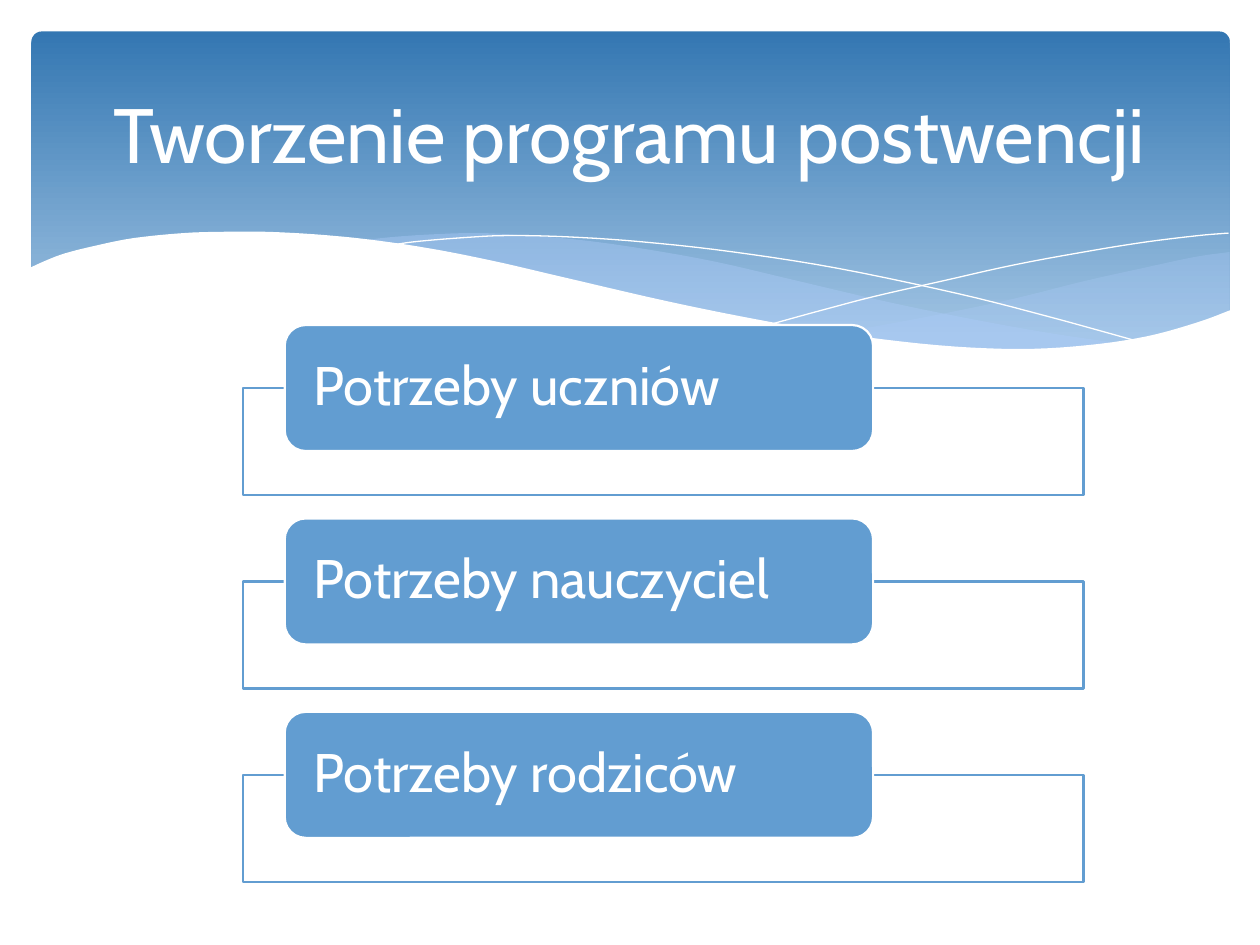
from dataclasses import dataclass
from typing import Optional

from lxml.etree import SubElement
from pptx import Presentation
from pptx.dml.color import RGBColor
from pptx.enum.shapes import MSO_SHAPE as Shape
from pptx.enum.text import MSO_ANCHOR as Anchor, PP_ALIGN as Align
from pptx.oxml.ns import qn
from pptx.util import Inches, Pt

WHITE = RGBColor(0xFF, 0xFF, 0xFF)
SKY = RGBColor(0xAC, 0xCB, 0xF9)
BLUE = RGBColor(0x62, 0x9D, 0xD1)
BANNER_TOP = RGBColor(0x34, 0x77, 0xB2)
BANNER_BOTTOM = RGBColor(0xA1, 0xC4, 0xE3)
FONT = "Cabin"

Point = tuple[float, float]


@dataclass(frozen=True)
class Wave:
    curves: list[list[Point]]
    fill: Optional[RGBColor] = None
    opacity: int = 100


@dataclass(frozen=True)
class Need:
    label: str
    top: float


WAVES = [
    Wave([[(9.76, 2), (9.48, 2.04), (9.06, 2.13), (8.61, 2.23), (8.05, 2.37),
           (7.53, 2.48), (7.06, 2.57), (6.61, 2.65)],
          [(6.61, 2.65), (7.05, 2.71), (7.57, 2.76), (8.03, 2.78), (8.54, 2.76),
           (8.97, 2.7), (9.35, 2.62), (9.76, 2.47)]], SKY, 29),
    Wave([[(8.93, 2.73), (8.37, 2.65), (7.75, 2.54), (7.06, 2.4), (6.29, 2.22),
           (5.69, 2.08), (5.14, 1.98), (4.65, 1.91), (4.2, 1.87), (3.8, 1.85),
           (3.44, 1.86), (3.13, 1.88), (2.86, 1.91)],
          [(2.86, 1.91), (3.42, 1.99), (4.04, 2.11), (4.49, 2.22), (5.3, 2.4),
           (6.01, 2.55), (6.65, 2.66), (7.22, 2.74), (7.73, 2.77), (8.18, 2.78),
           (8.57, 2.77), (8.93, 2.73)]], SKY, 40),
    Wave([[(3.09, 1.95), (3.28, 1.92), (3.63, 1.89), (4.01, 1.87), (4.5, 1.88),
           (5.1, 1.92), (5.82, 2), (6.65, 2.13), (7.6, 2.33), (8.31, 2.51),
           (9.07, 2.72)]]),
    Wave([[(6.13, 2.57), (6.53, 2.46), (6.95, 2.35), (7.48, 2.23), (8.06, 2.1),
           (8.66, 1.99), (9.1, 1.92), (9.51, 1.87), (9.75, 1.85)]]),
    Wave([[(9.77, 2.46), (9.5, 2.56), (9.1, 2.67), (8.63, 2.74), (8.09, 2.77),
           (7.44, 2.74), (6.68, 2.65), (6.03, 2.54), (5.29, 2.39), (4.47, 2.2),
           (3.91, 2.07), (3.4, 1.97), (2.92, 1.9), (2.5, 1.86), (2.11, 1.84),
           (1.77, 1.84), (1.46, 1.85), (1.06, 1.89), (0.76, 1.95), (0.52, 2.01),
           (0.36, 2.07), (0.23, 2.13)],
          [(0.23, 3.29), (9.77, 3.29)]], WHITE),
]

FIRST_TOP, LAST_TOP = 2.58, 5.65
LABELS = ["Potrzeby uczniów", "Potrzeby nauczyciel", "Potrzeby rodziców"]
PITCH = (LAST_TOP - FIRST_TOP) / (len(LABELS) - 1)
NEEDS = [Need(label, FIRST_TOP + row * PITCH) for row, label in enumerate(LABELS)]


def smooth(knots: list[Point], steps: int = 5) -> list[Point]:
    if len(knots) < 3:
        return knots
    padded = [knots[0], *knots, knots[-1]]
    points = []
    for before, start, end, after in zip(padded, padded[1:], padded[2:], padded[3:]):
        for step in range(steps):
            t = step / steps
            points.append(tuple(
                b + (c - a) * t / 2
                + (2 * a - 5 * b + 4 * c - d) * t**2 / 2
                + (3 * b - a - 3 * c + d) * t**3 / 2
                for a, b, c, d in zip(before, start, end, after)))
    return points + [knots[-1]]


def set_fill(shape, color: RGBColor, opacity: int = 100) -> None:
    shape.fill.solid()
    shape.fill.fore_color.rgb = color
    if opacity < 100:
        srgb = shape.fill._xPr.find(qn("a:solidFill"))[0]
        SubElement(srgb, qn("a:alpha")).set("val", str(opacity * 1000))


def set_line(shape, color: RGBColor, width: float) -> None:
    shape.line.color.rgb = color
    shape.line.width = Pt(width)


def add_box(slide, kind: Shape, left: float, top: float, width: float, height: float):
    box = slide.shapes.add_shape(
        kind, Inches(left), Inches(top), Inches(width), Inches(height))
    box.shadow.inherit = False
    return box


def write(frame, text: str, size: float, align: Align):
    frame.word_wrap = True
    frame.vertical_anchor = Anchor.MIDDLE
    paragraph = frame.paragraphs[0]
    paragraph.alignment = align
    run = paragraph.add_run()
    run.text = text
    run.font.name = FONT
    run.font.size = Pt(size)
    run.font.color.rgb = WHITE
    return paragraph


def draw_banner(slide) -> None:
    banner = add_box(slide, Shape.ROUNDED_RECTANGLE, 0.25, 0.25, 9.51, 2.7)
    banner.adjustments[0] = 0.03
    banner.fill.gradient()
    banner.fill.gradient_angle = 270
    stops = banner.fill.gradient_stops
    for stop, color, position in zip(stops, (BANNER_TOP, BANNER_BOTTOM), (0, 0.9)):
        stop.color.rgb = color
        stop.position = position
    banner.line.fill.background()


def draw_wave(slide, wave: Wave) -> None:
    start, *rest = [(Inches(x), Inches(y))
                    for curve in wave.curves for x, y in smooth(curve)]
    builder = slide.shapes.build_freeform(*start)
    builder.add_line_segments(rest, close=wave.fill is not None)
    outline = builder.convert_to_shape()
    outline.shadow.inherit = False
    if wave.fill is None:
        outline.fill.background()
        set_line(outline, WHITE, 0)
    else:
        set_fill(outline, wave.fill, wave.opacity)
        outline.line.fill.background()


def draw_title(slide, text: str) -> None:
    title = slide.shapes.add_textbox(Inches(0.5), Inches(0.37), Inches(9), Inches(1.37))
    write(title.text_frame, text, 44, Align.CENTER)


def draw_need(slide, need: Need) -> None:
    panel = add_box(slide, Shape.RECTANGLE, 1.93, need.top + 0.5, 6.67, 0.85)
    set_fill(panel, WHITE, 90)
    set_line(panel, BLUE, 1.25)
    card = add_box(slide, Shape.ROUNDED_RECTANGLE, 2.26, need.top, 4.67, 1)
    set_fill(card, BLUE)
    set_line(card, WHITE, 1.25)
    frame = card.text_frame
    frame.margin_left = frame.margin_right = Inches(0.18)
    frame.margin_top = frame.margin_bottom = 0
    write(frame, need.label, 31, Align.LEFT).line_spacing = 0.9


def main() -> None:
    deck = Presentation()
    deck.slide_width, deck.slide_height = Inches(10), Inches(7.5)
    slide = deck.slides.add_slide(deck.slide_layouts[6])
    draw_banner(slide)
    for wave in WAVES:
        draw_wave(slide, wave)
    draw_title(slide, "Tworzenie programu postwencji")
    for need in NEEDS:
        draw_need(slide, need)
    deck.save("out.pptx")


if __name__ == "__main__":
    main()
